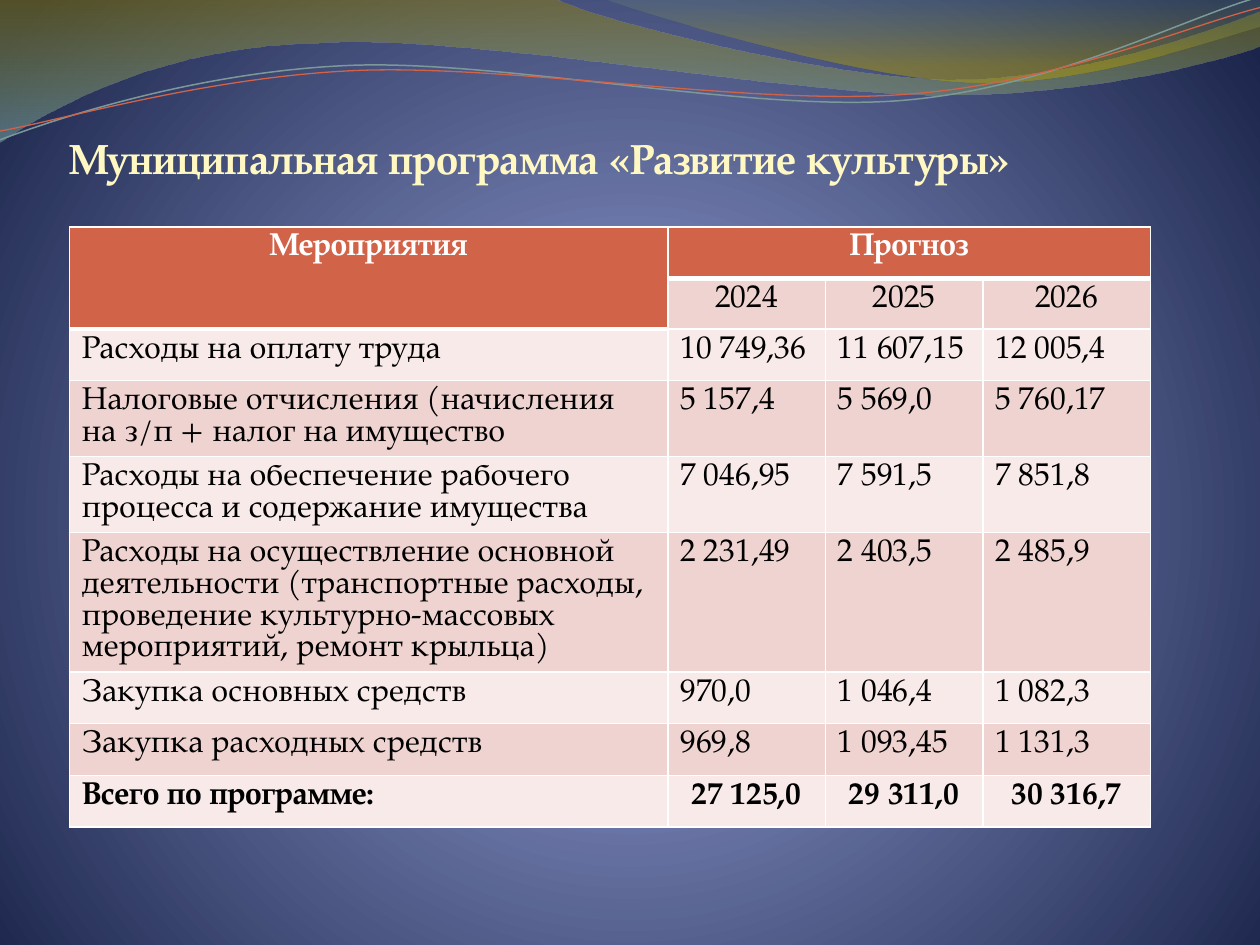
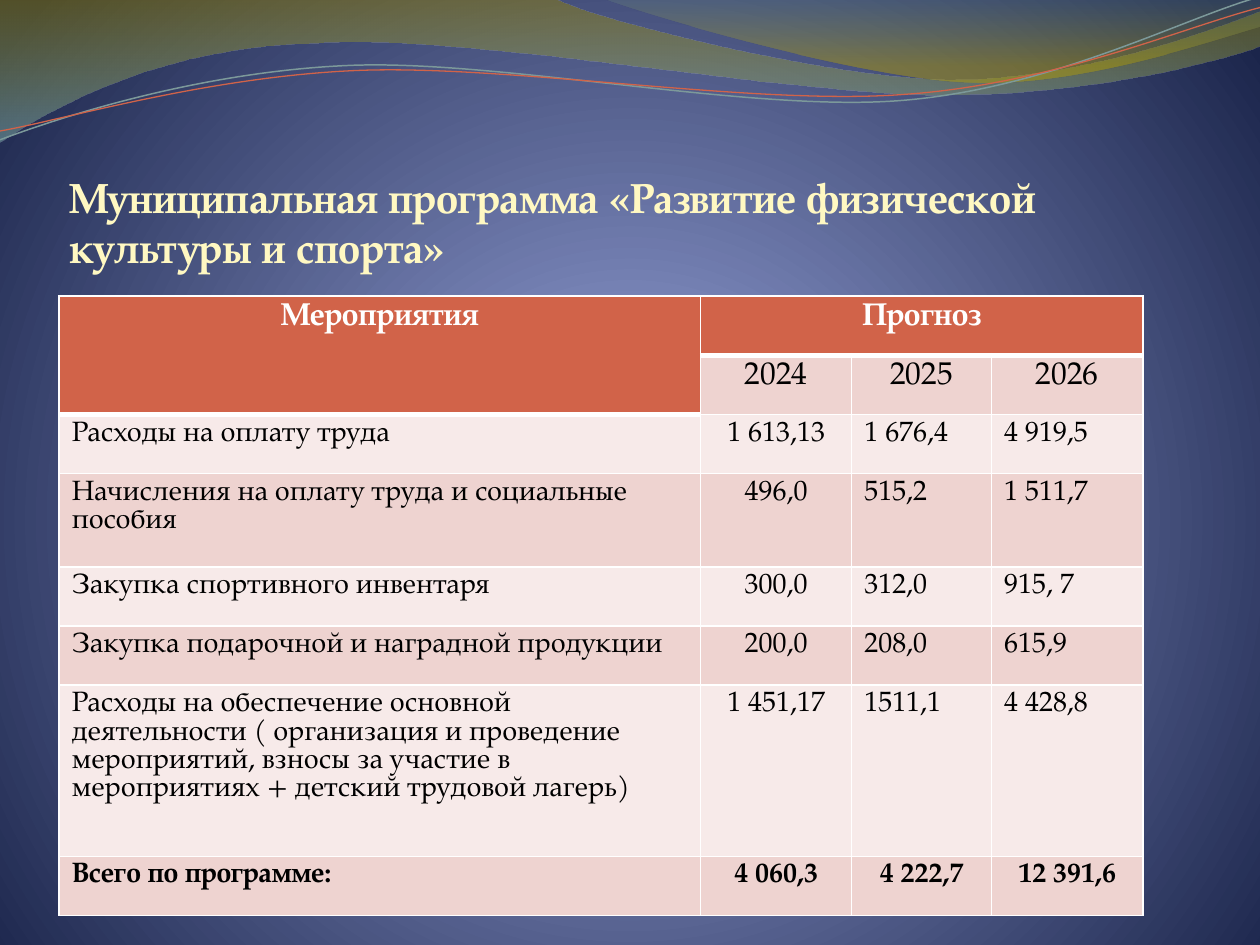
"""Build two budget slides on municipal programmes over a shared wave design."""
import lxml.etree
import pptx
import pptx.dml.color
import pptx.enum.text
import pptx.oxml
import pptx.oxml.ns
import pptx.util

Inches = pptx.util.Inches
RGBColor = pptx.dml.color.RGBColor
ALIGN = pptx.enum.text.PP_ALIGN
qn = pptx.oxml.ns.qn

FONT = "TeX Gyre Pagella"
CREAM = RGBColor(0xFF, 0xF8, 0xC2)
WHITE = RGBColor(0xFF, 0xFF, 0xFF)
BLACK = RGBColor(0, 0, 0)
BRICK = RGBColor(0xD1, 0x63, 0x49)
SAGE = RGBColor(0x7C, 0x99, 0x9A)
BANDS = RGBColor(0xF7, 0xEA, 0xE9), RGBColor(0xEE, 0xD3, 0xD0)
SKY_STOPS = [
    (0, RGBColor(0x7A, 0x88, 0xC3), 100),
    (25, RGBColor(0x7A, 0x86, 0xB9), 100),
    (100, RGBColor(0x1B, 0x25, 0x4B), 100),
]
SKY_PATH = '<a:path path="circle"><a:fillToRect l="10000" t="110000" r="10000" b="100000"/></a:path>'
DOWNWARD = '<a:lin ang="5400000" scaled="1"/>'

WAVES = [
    {"outline": [(0, 0), (4.4, -0.01), (4.76, 0.17, 6.64, 0.63, 7.58, 0.63),
                 (8.53, 0.63, 9.58, 0.26, 10, 0.09), (10.01, 0.36),
                 (9.83, 0.44, 8.7, 0.76, 7.46, 0.75), (6.22, 0.75, 3.82, 0.28, 2.57, 0.34),
                 (1.29, 0.36, 0.46, 0.83, -0.01, 1.13), (0, 0)],
     "stops": [(0, RGBColor(0x97, 0x85, 0x00), 45), (100, RGBColor(0x77, 0xA5, 0xA6), 55)]},
    {"outline": [(4.79, -0.01), (5.09, 0.11, 6.82, 0.62, 7.69, 0.65),
                 (8.56, 0.69, 9.61, 0.32, 10, 0.21), (10, 0), (4.79, -0.01)],
     "stops": [(0, RGBColor(0x64, 0x84, 0x84), 30), (80, RGBColor(0xB4, 0x9F, 0x00), 45)]},
    {"outline": [(0, 1.11), (0.48, 0.93, 1.58, 0.57, 2.77, 0.52),
                 (3.95, 0.47, 5.93, 0.89, 7.13, 0.8), (8.33, 0.71, 9.38, 0.15, 9.98, -0.02)],
     "line": (SAGE, 0.85)},
    {"outline": [(0, 1.04), (0.47, 0.96, 1.64, 0.61, 2.83, 0.56),
                 (4.03, 0.51, 5.97, 0.84, 7.17, 0.75), (8.36, 0.67, 9.41, 0.21, 10, 0.06)],
     "line": (BRICK, 0.75)},
]

HEADER_ROWS = [("Мероприятия", "Прогноз", "", ""), ("", "2024", "2025", "2026")]
PROGRAMMES = [
    {"title": "Муниципальная программа «Развитие культуры»",
     "title_box": (0.55, 0.86, 8.5, 0.59), "table_at": (0.55, 1.8),
     "columns": [4.75, 1.25, 1.25, 1.33],
     "heights": [0.41, 0.4, 0.41, 0.6, 0.6, 1.1, 0.41, 0.41, 0.41],
     "size": 18, "centred_columns": (),
     "rows": [
         ("Расходы на оплату труда", "10 749,36", "11 607,15", "12 005,4"),
         ("Налоговые отчисления (начисления на з/п + налог на имущество",
          "5 157,4", "5 569,0", "5 760,17"),
         ("Расходы на обеспечение рабочего процесса и содержание имущества",
          "7 046,95", "7 591,5", "7 851,8"),
         ("Расходы на осуществление основной деятельности (транспортные расходы, "
          "проведение культурно-массовых мероприятий, ремонт крыльца)",
          "2 231,49", "2 403,5", "2 485,9"),
         ("Закупка основных средств", "970,0", "1 046,4", "1 082,3"),
         ("Закупка расходных средств", "969,8", "1 093,45", "1 131,3"),
         ("Всего по программе:", "27 125,0", "29 311,0", "30 316,7")]},
    {"title": "Муниципальная программа «Развитие физической культуры и спорта»",
     "title_box": (0.55, 1.33, 8.5, 0.83), "table_at": (0.47, 2.35),
     "columns": [5.09, 1.2, 1.11, 1.2],
     "heights": [0.47, 0.47, 0.47, 0.74, 0.47, 0.47, 1.36, 0.47],
     "size": 16, "centred_columns": (1,),
     "rows": [
         ("Расходы на оплату труда", "1 613,13", "1 676,4", "4 919,5"),
         ("Начисления на оплату труда и социальные пособия", "496,0", "515,2", "1 511,7"),
         ("Закупка спортивного инвентаря", "300,0", "312,0", "915, 7"),
         ("Закупка подарочной и наградной продукции", "200,0", "208,0", "615,9"),
         ("Расходы на обеспечение основной деятельности ( организация и проведение "
          "мероприятий, взносы за участие в мероприятиях + детский трудовой лагерь)",
          "1 451,17", "1511,1", "4 428,8"),
         ("Всего по программе:", "4 060,3", "4 222,7", "12 391,6")]},
]


def write_text(frame, text, size=18, color=BLACK, bold=False, align=ALIGN.LEFT):
    """Put one formatted paragraph into a text frame."""
    paragraph = frame.paragraphs[0]
    paragraph.alignment = align
    run = paragraph.add_run()
    run.text = text
    run.font.name = FONT
    run.font.size = pptx.util.Pt(size)
    run.font.bold = bold
    run.font.color.rgb = color


def set_gradient(fill, owner, stops, direction):
    """Give a fill its colour stops, opacities and direction."""
    fill.gradient()
    gradient = next(owner.iter(qn("a:gradFill")))
    stop_xml = "".join(
        f'<a:gs pos="{place * 1000}"><a:srgbClr val="{color}">'
        f'<a:alpha val="{opacity * 1000}"/></a:srgbClr></a:gs>'
        for place, color, opacity in stops)
    gradient.getparent().replace(gradient, pptx.oxml.parse_xml(
        f'<a:gradFill {pptx.oxml.ns.nsdecls("a")} rotWithShape="1">'
        f'<a:gsLst>{stop_xml}</a:gsLst>{direction}</a:gradFill>'))


def draw_outline(slide, outline, closed):
    """Build a freeform and bend its six-number pieces into cubic curves."""
    ends = [(Inches(piece[-2]), Inches(piece[-1])) for piece in outline]
    builder = slide.shapes.build_freeform(*ends[0])
    builder.add_line_segments(ends[1:], close=closed)
    shape = builder.convert_to_shape()
    for segment, piece in zip(list(shape.element.iter(qn("a:lnTo"))), outline[1:]):
        if len(piece) == 6:
            curve = lxml.etree.Element(qn("a:cubicBezTo"))
            for x, y in zip(piece[::2], piece[1::2]):
                lxml.etree.SubElement(curve, qn("a:pt"), x=str(Inches(x) - shape.left),
                                      y=str(Inches(y) - shape.top))
            segment.getparent().replace(segment, curve)
    return shape


def decorate_layout(layout, slide):
    """Give the layout its background and waves, drawn by way of a slide."""
    set_gradient(layout.background.fill, layout.element, SKY_STOPS, SKY_PATH)
    for wave in WAVES:
        shape = draw_outline(slide, wave["outline"], "stops" in wave)
        shape.shadow.inherit = False
        if "stops" in wave:
            set_gradient(shape.fill, shape.element, wave["stops"], DOWNWARD)
            shape.line.fill.background()
        else:
            shape.fill.background()
            shape.line.color.rgb, width = wave["line"]
            shape.line.width = pptx.util.Pt(width)
        layout.element.cSld.spTree.append(shape.element)


def set_borders(cell, top, bottom):
    """Draw white cell borders with the given top and bottom widths."""
    properties = cell._tc.get_or_add_tcPr()
    for side, width in (("L", 1), ("R", 1), ("T", top), ("B", bottom)):
        line = lxml.etree.SubElement(properties, qn(f"a:ln{side}"), w=str(pptx.util.Pt(width)))
        fill = lxml.etree.SubElement(line, qn("a:solidFill"))
        lxml.etree.SubElement(fill, qn("a:srgbClr"), val=str(WHITE))


def is_header(row, column):
    """Tell whether a cell belongs to the coloured heading."""
    return row == 0 or (row == 1 and column == 0)


def add_budget(slide, programme):
    """Add the table of yearly costs."""
    rows = HEADER_ROWS + programme["rows"]
    widths, heights = programme["columns"], programme["heights"]
    left, top = programme["table_at"]
    table = slide.shapes.add_table(
        len(rows), len(widths), Inches(left), Inches(top),
        Inches(sum(widths)), Inches(sum(heights))).table
    for column, width in zip(table.columns, widths):
        column.width = Inches(width)
    for row, height in zip(table.rows, heights):
        row.height = Inches(height)
    table.cell(0, 0).merge(table.cell(1, 0))
    table.cell(0, 1).merge(table.cell(0, 3))
    for r, values in enumerate(rows):
        total = r == len(rows) - 1
        for c, text in enumerate(values):
            cell, header = table.cell(r, c), is_header(r, c)
            below_header = r > 0 and not header and is_header(r - 1, c)
            set_borders(cell, 3 if below_header else 1, 3 if header else 1)
            cell.fill.solid()
            cell.fill.fore_color.rgb = BRICK if header else BANDS[r % 2]
            centred = r < 2 or (total and c > 0) or c in programme["centred_columns"]
            if text:
                write_text(cell.text_frame, text, size=18 if r < 2 else programme["size"],
                           color=WHITE if header else BLACK, bold=header or total,
                           align=ALIGN.CENTER if centred else ALIGN.LEFT)


def add_title(slide, programme):
    """Place and fill the title placeholder."""
    title = slide.shapes.title
    title.left, title.top, title.width, title.height = map(Inches, programme["title_box"])
    frame = title.text_frame
    frame.margin_left = frame.margin_top = frame.margin_right = frame.margin_bottom = 0
    frame.vertical_anchor = pptx.enum.text.MSO_ANCHOR.BOTTOM
    frame.auto_size = pptx.enum.text.MSO_AUTO_SIZE.NONE
    frame.word_wrap = True
    write_text(frame, programme["title"], size=24, color=CREAM, bold=True)


def main():
    """Build and save the presentation."""
    presentation = pptx.Presentation()
    presentation.slide_width, presentation.slide_height = Inches(10), Inches(7.5)
    layout = presentation.slide_layouts[5]
    slides = [presentation.slides.add_slide(layout) for _ in PROGRAMMES]
    decorate_layout(layout, slides[0])
    for slide, programme in zip(slides, PROGRAMMES):
        add_title(slide, programme)
        add_budget(slide, programme)
    presentation.save("out.pptx")


if __name__ == "__main__":
    main()
